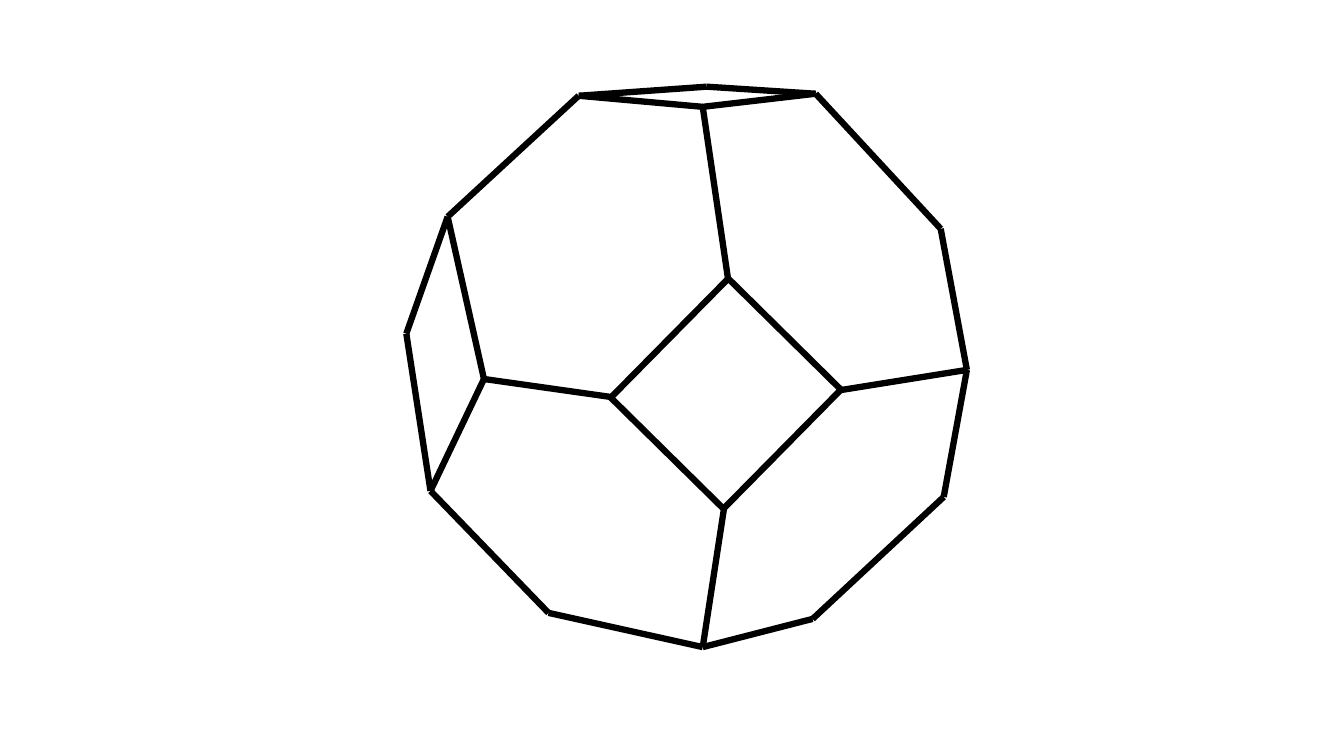
from dataclasses import dataclass

from lxml.etree import SubElement
from pptx import Presentation
from pptx.dml.color import RGBColor
from pptx.enum.shapes import MSO_CONNECTOR, MSO_SHAPE
from pptx.oxml.ns import qn
from pptx.util import Inches, Pt


@dataclass(frozen=True)
class Theme:
    ink: RGBColor = RGBColor(0, 0, 0)
    paper: RGBColor = RGBColor(255, 255, 255)
    edge_width: float = 4.5


# Corners of the truncated octahedron, in inches.
CORNERS = {
    "roof left": (5.74, 0.95),
    "roof back": (7.01, 0.86),
    "roof right": (8.09, 0.93),
    "roof front": (6.97, 1.06),
    "front top": (7.22, 2.76),
    "front left": (6.07, 3.94),
    "front right": (8.34, 3.87),
    "front bottom": (7.18, 5.05),
    "side top": (4.44, 2.15),
    "side back": (4.03, 3.31),
    "side bottom": (4.27, 4.87),
    "side front": (4.8, 3.76),
    "right upper": (9.33, 2.27),
    "right middle": (9.59, 3.67),
    "right lower": (9.36, 4.93),
    "base left": (5.44, 6.08),
    "base middle": (6.97, 6.42),
    "base right": (8.06, 6.14),
}

# Each chain is drawn edge by edge through its corners.
EDGE_CHAINS = [
    ["roof right", "right upper", "right middle", "right lower", "base right",
     "base middle", "base left", "side bottom", "side back", "side top",
     "roof left", "roof back", "roof right", "roof front", "roof left"],
    ["side top", "side front", "side bottom"],
    ["roof front", "front top"],
    ["side front", "front left"],
    ["front right", "right middle"],
    ["front bottom", "base middle"],
]


class SolidDrawing:
    def __init__(self, slide, theme):
        self.slide = slide
        self.theme = theme

    def style_line(self, line):
        line.color.rgb = self.theme.ink
        line.width = Pt(self.theme.edge_width)

    def face(self, left, top, width, height, rotation):
        face = self.slide.shapes.add_shape(
            MSO_SHAPE.RECTANGLE,
            Inches(left), Inches(top), Inches(width), Inches(height))
        face.rotation = rotation
        face.shadow.inherit = False
        face.fill.solid()
        face.fill.fore_color.rgb = self.theme.paper
        self.style_line(face.line)

    def edge(self, start, end):
        points = [Inches(length) for length in (*start, *end)]
        edge = self.slide.shapes.add_connector(MSO_CONNECTOR.STRAIGHT, *points)
        self.style_line(edge.line)
        SubElement(edge._element.spPr, qn("a:effectLst"))


def main():
    presentation = Presentation()
    presentation.slide_width = Inches(13.33)
    presentation.slide_height = Inches(7.5)
    slide = presentation.slides.add_slide(presentation.slide_layouts[6])
    drawing = SolidDrawing(slide, Theme())

    drawing.face(6.37, 3.12, 1.66, 1.57, rotation=314.6)
    for chain in EDGE_CHAINS:
        for start, end in zip(chain, chain[1:]):
            drawing.edge(CORNERS[start], CORNERS[end])

    presentation.save("out.pptx")


if __name__ == "__main__":
    main()
